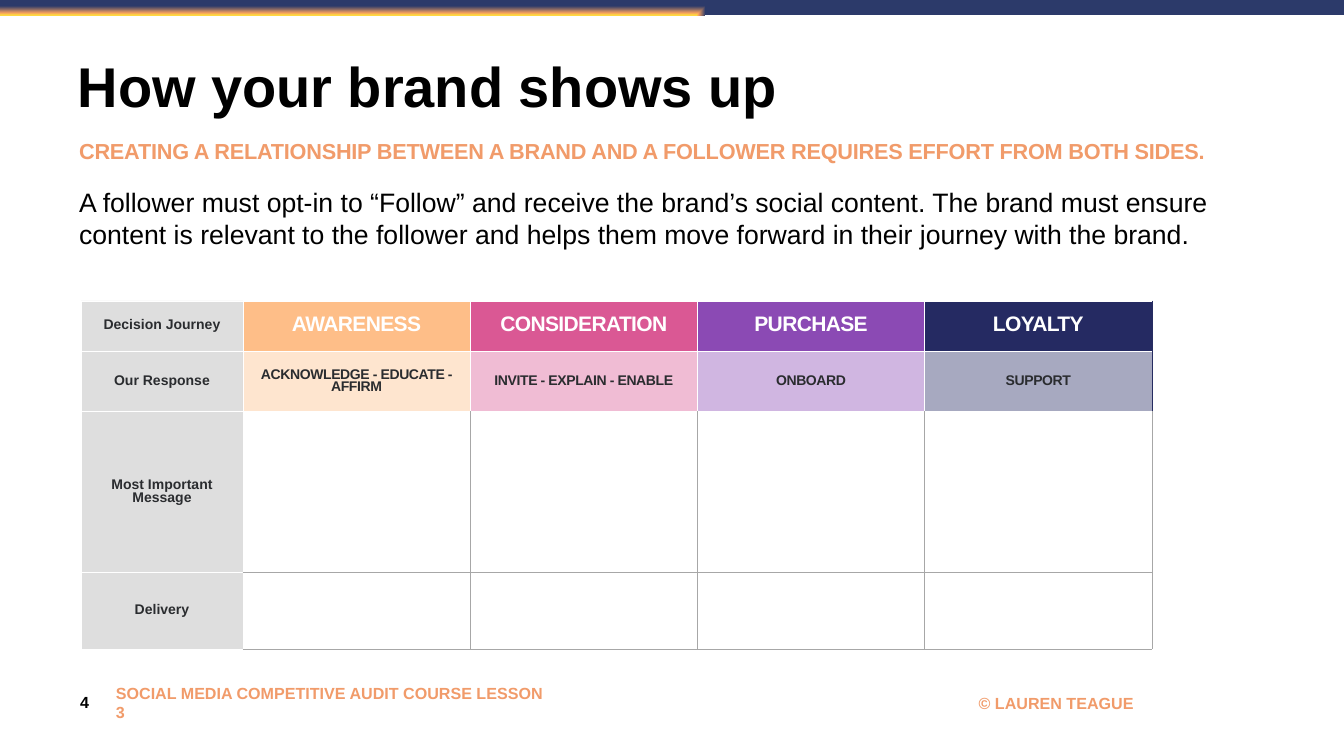
from dataclasses import dataclass
from typing import Optional

from lxml.etree import SubElement
from pptx import Presentation
from pptx.dml.color import RGBColor
from pptx.enum.shapes import MSO_SHAPE
from pptx.enum.text import MSO_ANCHOR, MSO_AUTO_SIZE, PP_ALIGN
from pptx.oxml.ns import qn
from pptx.util import Pt

SCALE = 9144  # EMU in one px, at 100 px to the inch


@dataclass(frozen=True)
class Theme:
    font: str = "Arial"
    black: str = "000000"
    white: str = "FFFFFF"
    orange: str = "F19B6A"
    ink: str = "2A2C2F"
    grey: str = "A7A7A7"
    edge_navy: str = "262C61"
    bar_stops: tuple = ((0, "FFD840"), (20, "F7A05D"), (93, "2C3A6A"))
    title_size: int = 80
    lead_size: int = 31
    body_size: int = 38
    footer_size: int = 23
    stage_size: int = 30
    label_size: int = 20


THEME = Theme()


@dataclass(frozen=True)
class Box:
    left: int
    top: int
    width: int
    height: int

    def emu(self) -> tuple:
        return tuple(px(n) for n in (self.left, self.top, self.width, self.height))


@dataclass(frozen=True)
class Line:
    text: str
    size: int
    colour: str
    bold: bool = True
    tracking: int = 0  # hundredths of a point
    spacing: Optional[float] = None
    before: int = 0
    align: PP_ALIGN = PP_ALIGN.LEFT


@dataclass(frozen=True)
class Stage:
    name: str
    response: str
    colour: str


@dataclass(frozen=True)
class Footer:
    box: Box
    text: str
    colour: str


STAGES = (
    Stage("AWARENESS", "ACKNOWLEDGE - EDUCATE - AFFIRM", "FEBE88"),
    Stage("CONSIDERATION", "INVITE - EXPLAIN - ENABLE", "DA5894"),
    Stage("PURCHASE", "ONBOARD", "8B4AB4"),
    Stage("LOYALTY", "SUPPORT", "252A62"),
)
ROW_LABELS = ("Decision Journey", "Our Response", "Most Important Message", "Delivery")
ROW_HEIGHTS = (100, 120, 319, 152)
LABEL_WIDTH, STAGE_WIDTH = 321, 451
FOOTERS = (
    Footer(Box(222, 1368, 880, 52), "SOCIAL MEDIA COMPETITIVE AUDIT COURSE LESSON 3", THEME.orange),
    Footer(Box(1934, 1368, 333, 52), "© LAUREN TEAGUE", THEME.orange),
    Footer(Box(151, 1366, 73, 52), "4", THEME.black),
)


def px(length: int) -> int:
    return length * SCALE


def write(frame, lines: list, inset: int) -> None:
    """Fill a text frame, one paragraph for each line."""
    frame.word_wrap = True
    frame.margin_left = frame.margin_right = px(inset)
    frame.margin_top = frame.margin_bottom = px(inset)
    for index, line in enumerate(lines):
        para = frame.paragraphs[0] if index == 0 else frame.add_paragraph()
        span = para.add_run()
        span.text = line.text
        if line.tracking:
            span.font._element.set("spc", str(line.tracking))
        para.alignment = line.align
        para.line_spacing = line.spacing
        para.space_before = Pt(line.before)
        para.font.name = THEME.font
        para.font.size = Pt(line.size)
        para.font.bold = line.bold
        para.font.color.rgb = RGBColor.from_string(line.colour)


def add_text(page, box: Box, lines: list, anchor=MSO_ANCHOR.TOP) -> None:
    frame = page.shapes.add_textbox(*box.emu()).text_frame
    frame.vertical_anchor = anchor
    write(frame, lines, 8)


def add_top_bar(page) -> None:
    bar = page.shapes.add_shape(MSO_SHAPE.RECTANGLE, *Box(-9, -8, 2684, 38).emu())
    bar.shadow.inherit = False
    bar.line.fill.background()
    bar.fill.gradient()
    gradient = bar._element.spPr.find(qn("a:gradFill"))
    for child in list(gradient):
        gradient.remove(child)
    stops = SubElement(gradient, qn("a:gsLst"))
    for position, colour in THEME.bar_stops:
        stop = SubElement(stops, qn("a:gs"), pos=str(position * 1000))
        SubElement(stop, qn("a:srgbClr"), val=colour)
    spread = SubElement(gradient, qn("a:path"), path="shape")
    SubElement(spread, qn("a:fillToRect"), l="6000", t="99000", r="94000", b="1000")


def upright_edge(row: int, edge: int) -> str:
    if row < 2:
        return THEME.edge_navy if edge == len(STAGES) + 1 else THEME.white
    return THEME.white if edge < 2 else THEME.grey


def level_edge(edge: int, column: int) -> str:
    return THEME.white if edge < 3 or column == 0 else THEME.grey


def set_borders(cell, row: int, column: int) -> None:
    properties = cell._tc.get_or_add_tcPr()
    edges = (
        ("a:lnL", upright_edge(row, column)),
        ("a:lnR", upright_edge(row, column + 1)),
        ("a:lnT", level_edge(row, column)),
        ("a:lnB", level_edge(row + 1, column)),
    )
    for tag, colour in edges:
        border = SubElement(properties, qn(tag), w=str(Pt(1)))
        SubElement(SubElement(border, qn("a:solidFill")), qn("a:srgbClr"), val=colour)


def fill_cell(cell, line: Line, colour: str, opacity: int = 100) -> None:
    cell.vertical_anchor = MSO_ANCHOR.MIDDLE
    write(cell.text_frame, [line], 6)
    cell.fill.solid()
    cell.fill.fore_color.rgb = RGBColor.from_string(colour)
    if opacity < 100:
        solid = cell._tc.tcPr.find(qn("a:solidFill"))
        SubElement(solid[0], qn("a:alpha"), val=str(opacity * 1000))


def cell_line(text: str, size: int, colour: str, tracking: int = 0) -> Line:
    return Line(text, size, colour, tracking=tracking, spacing=0.8, align=PP_ALIGN.CENTER)


def add_journey_table(page) -> None:
    widths = (LABEL_WIDTH,) + (STAGE_WIDTH,) * len(STAGES)
    box = Box(161, 597, sum(widths), sum(ROW_HEIGHTS))
    table = page.shapes.add_table(len(ROW_HEIGHTS), len(widths), *box.emu()).table
    table.first_row = table.horz_banding = False
    for column, width in zip(table.columns, widths):
        column.width = px(width)
    for row, height in enumerate(ROW_HEIGHTS):
        table.rows[row].height = px(height)
        for column in range(len(widths)):
            cell = table.cell(row, column)
            set_borders(cell, row, column)
            if column == 0:
                fill_cell(cell, cell_line(ROW_LABELS[row], THEME.label_size, THEME.ink), THEME.grey, 37)
                continue
            stage = STAGES[column - 1]
            if row == 0:
                fill_cell(cell, cell_line(stage.name, THEME.stage_size, THEME.white, -90), stage.colour)
            elif row == 1:
                fill_cell(cell, cell_line(stage.response, THEME.label_size, THEME.ink, -60), stage.colour, 40)
            else:
                cell.fill.background()


def main() -> None:
    deck = Presentation()
    deck.slide_width, deck.slide_height = px(2667), px(1500)
    page = deck.slides.add_slide(deck.slide_layouts[5])

    # Top bar and footer
    add_top_bar(page)
    for footer in FOOTERS:
        add_text(page, footer.box, [Line(footer.text, THEME.footer_size, footer.colour)], MSO_ANCHOR.MIDDLE)

    # Title
    title = page.shapes.title
    title.left, title.top, title.width, title.height = Box(149, 122, 2424, 166).emu()
    title.text_frame.auto_size = MSO_AUTO_SIZE.NONE
    title.text_frame.vertical_anchor = MSO_ANCHOR.TOP
    write(title.text_frame, [Line("How your brand shows up", THEME.title_size, THEME.black, spacing=0.8)], 5)

    # Introduction
    add_text(page, Box(149, 272, 2424, 342), [
        Line("CREATING A RELATIONSHIP BETWEEN A BRAND AND A FOLLOWER REQUIRES EFFORT FROM BOTH SIDES.",
             THEME.lead_size, THEME.orange, tracking=-30, spacing=0.9),
        Line("A follower must opt-in to “Follow” and receive the brand’s social content. The brand must ensure "
             "content is relevant to the follower and helps them move forward in their journey with the brand.",
             THEME.body_size, THEME.black, bold=False, before=30),
    ])

    # Decision journey
    add_journey_table(page)
    deck.save("out.pptx")


if __name__ == "__main__":
    main()
